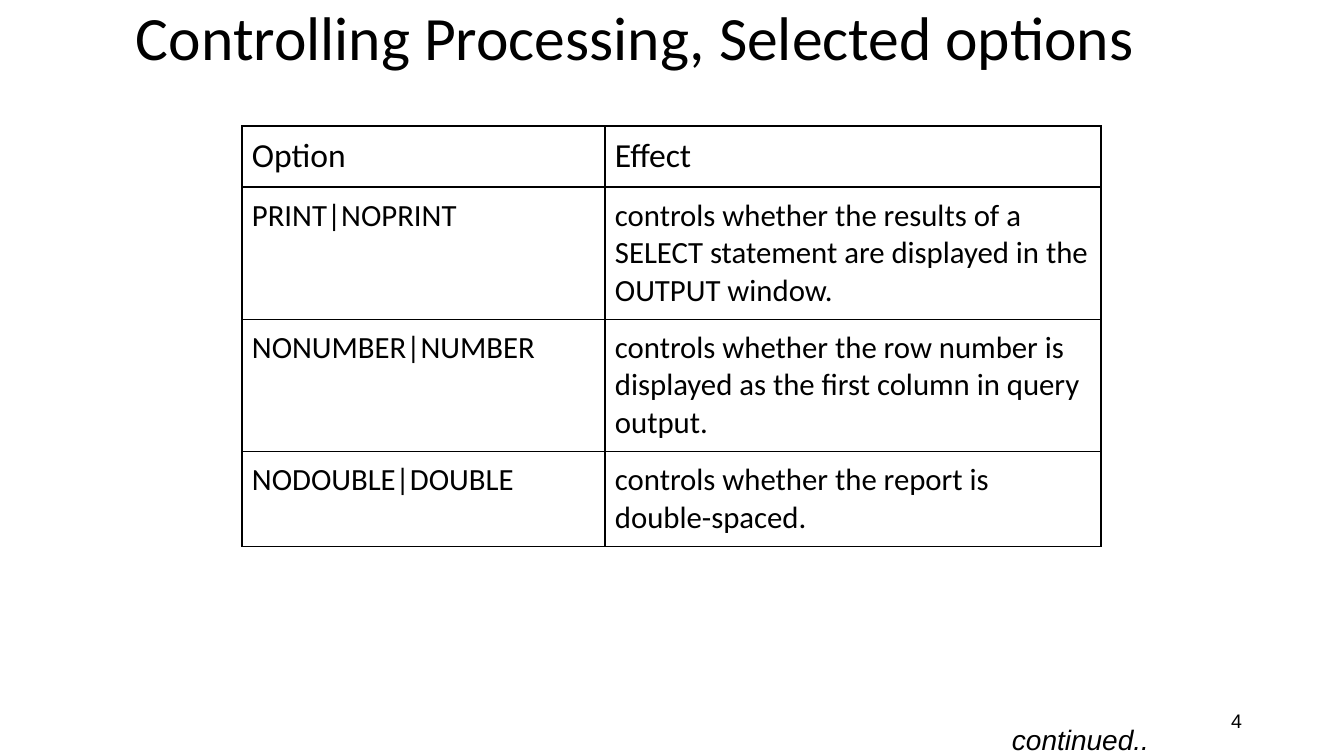
from dataclasses import dataclass

from lxml.etree import SubElement
from pptx import Presentation
from pptx.dml.color import RGBColor
from pptx.enum.text import MSO_ANCHOR, PP_ALIGN
from pptx.oxml.ns import qn
from pptx.util import Emu, Pt

TITLE = "Controlling Processing, Selected options"
OPTIONS = [
    ("Option", "Effect"),
    ("PRINT|NOPRINT",
     "controls whether the results of a SELECT statement are displayed in the OUTPUT window."),
    ("NONUMBER|NUMBER",
     "controls whether the row number is displayed as the first column in query output."),
    ("NODOUBLE|DOUBLE", "controls whether the report is double-spaced."),
]
CONTINUED = "continued..."
PAGE_NUMBER = "4"

# Lengths in px
PAGE_SIZE = (1344, 756)
TITLE_BOX = (126, -3, 1159, 88)
NUMBER_BOX = (950, 701, 302, 40)
CONTINUED_BOX = (1002, 713, 164, 53)
TABLE_CORNER = (242, 126)
COLUMN_WIDTHS = (363, 496)
ROW_HEIGHTS = (60, 132, 132, 95)
CELL_MARGIN = 10


@dataclass(frozen=True)
class Theme:
    ink: str = "000000"
    paper: str = "FFFFFF"
    body_font: str = "Calibri"
    note_font: str = "Arial"
    title_size: int = 44
    header_size: int = 24
    cell_size: int = 22
    continued_size: int = 20
    number_size: int = 14
    border_width: int = 1


THEME = Theme()


def px(length):
    return Emu(round(length * 914400 / 100.8))


def add_span(para, text, font, size, italic=False):
    span = para.add_run()
    span.text = text
    span.font.name = font
    span.font.size = Pt(size)
    span.font.italic = italic
    span.font.color.rgb = RGBColor.from_string(THEME.ink)


def add_text(page, bounds, text, font, size, anchor=MSO_ANCHOR.MIDDLE,
             align=PP_ALIGN.LEFT, wrap=True, italic=False):
    box = page.shapes.add_textbox(*map(px, bounds))
    frame = box.text_frame
    frame.word_wrap = wrap
    frame.vertical_anchor = anchor
    para = frame.paragraphs[0]
    para.alignment = align
    add_span(para, text, font, size, italic)
    return box


def add_borders(cell):
    properties = cell._tc.get_or_add_tcPr()
    for side in ("a:lnL", "a:lnR", "a:lnT", "a:lnB"):
        line = SubElement(properties, qn(side), w=str(Pt(THEME.border_width)))
        fill = SubElement(line, qn("a:solidFill"))
        SubElement(fill, qn("a:srgbClr"), val=THEME.ink)


def add_options_table(page):
    size = (sum(COLUMN_WIDTHS), sum(ROW_HEIGHTS))
    table = page.shapes.add_table(
        len(OPTIONS), len(COLUMN_WIDTHS), *map(px, TABLE_CORNER + size)).table
    table.horz_banding = False
    table.first_row = False
    for column, width in zip(table.columns, COLUMN_WIDTHS):
        column.width = px(width)
    for index, (row, height, texts) in enumerate(zip(table.rows, ROW_HEIGHTS, OPTIONS)):
        row.height = px(height)
        text_size = THEME.cell_size if index else THEME.header_size
        for cell, text in zip(row.cells, texts):
            cell.margin_left = cell.margin_right = px(CELL_MARGIN)
            cell.margin_top = cell.margin_bottom = px(CELL_MARGIN)
            add_borders(cell)
            cell.fill.solid()
            cell.fill.fore_color.rgb = RGBColor.from_string(THEME.paper)
            add_span(cell.text_frame.paragraphs[0], text, THEME.body_font, text_size)


def main():
    deck = Presentation()
    deck.slide_width, deck.slide_height = map(px, PAGE_SIZE)
    page = deck.slides.add_slide(deck.slide_layouts[6])
    add_options_table(page)
    add_text(page, NUMBER_BOX, PAGE_NUMBER, THEME.note_font, THEME.number_size,
             align=PP_ALIGN.RIGHT)
    continued = add_text(page, CONTINUED_BOX, CONTINUED, THEME.note_font,
                         THEME.continued_size, anchor=MSO_ANCHOR.TOP,
                         wrap=False, italic=True)
    continued.text_frame.margin_top = continued.text_frame.margin_bottom = px(CELL_MARGIN)
    title = add_text(page, TITLE_BOX, TITLE, THEME.body_font, THEME.title_size)
    title.text_frame.paragraphs[0].line_spacing = 0.9
    deck.save("out.pptx")


if __name__ == "__main__":
    main()
